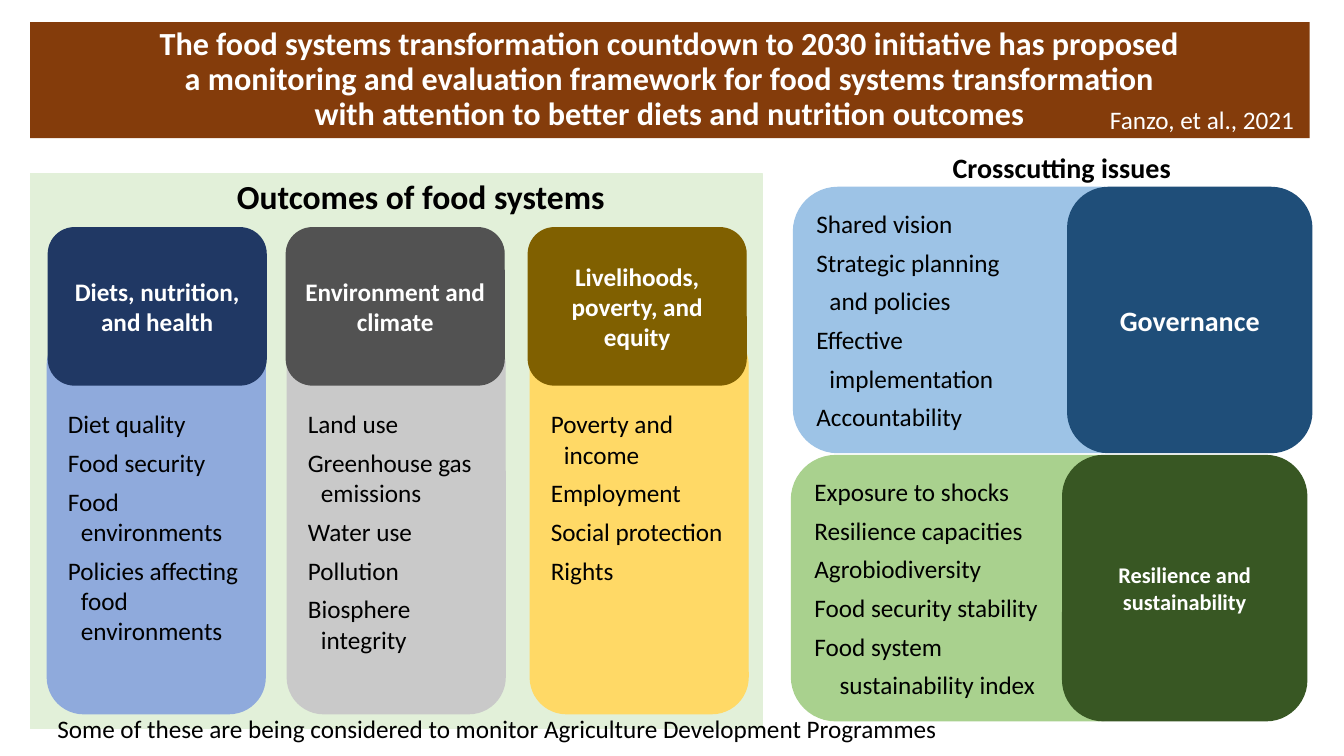
"""Build the food systems monitoring framework slide."""
from pptx import Presentation
from pptx.dml.color import RGBColor
from pptx.enum.shapes import MSO_SHAPE
from pptx.enum.text import MSO_ANCHOR, PP_ALIGN
from pptx.util import Inches, Pt

RECT, ROUNDED = MSO_SHAPE.RECTANGLE, MSO_SHAPE.ROUNDED_RECTANGLE
TOP, MIDDLE = MSO_ANCHOR.TOP, MSO_ANCHOR.MIDDLE
LEFT, CENTER = PP_ALIGN.LEFT, PP_ALIGN.CENTER

THEME = {
    "font": "Calibri", "dark": "000000", "light": "FFFFFF",
    "banner": "843C0B", "panel": "E2F0D9",
    "title": 23, "section": 24, "crosscutting": 20, "body": 18,
}
HANGING, CONTINUED, FLUSH, INSET = (0.13, -0.13), (0.13, 0), (0, 0), (0, 0.25)

TITLE = [
    "The food systems transformation countdown to 2030 initiative has proposed",
    "a monitoring and evaluation framework for food systems transformation",
    "with attention to better diets and nutrition outcomes",
]
OUTCOMES = [
    {"heading": "Diets, nutrition, and health", "head_left": 0.48, "body_left": 0.47,
     "head_color": "203864", "body_color": "8FAADC",
     "items": ["Diet quality", "Food security", "Food environments",
               "Policies affecting food environments"]},
    {"heading": "Environment and climate", "head_left": 2.84, "body_left": 2.85,
     "head_color": "525252", "body_color": "C9C9C9",
     "items": ["Land use", "Greenhouse gas emissions", "Water use", "Pollution",
               "Biosphere integrity"]},
    {"heading": "Livelihoods, poverty, and equity", "head_left": 5.24, "body_left": 5.26,
     "head_color": "806000", "body_color": "FFD966",
     "items": ["Poverty and income", "Employment", "Social protection", "Rights"]},
]
CROSSCUTTING = [
    {"heading": "Governance", "size": 20, "head_left": 10.59, "body_left": 7.87,
     "head_color": "1F4E79", "body_color": "9DC3E6",
     "items": [("Shared vision", HANGING), ("Strategic planning", HANGING),
               ("and policies", CONTINUED), ("Effective", HANGING),
               ("implementation", CONTINUED), ("Accountability", HANGING)]},
    {"heading": "Resilience and sustainability", "size": 16, "head_left": 10.54,
     "body_left": 7.85, "head_color": "385723", "body_color": "A9D18E",
     "items": [("Exposure to shocks", FLUSH), ("Resilience capacities", FLUSH),
               ("Agrobiodiversity", FLUSH), ("Food security stability", FLUSH),
               ("Food system", FLUSH), ("sustainability index", INSET)]},
]
LABELS = [
    ("Outcomes of food systems", (2.25, 1.7, 3.89, 0.5),
     {"size": THEME["section"], "bold": True}, False),
    ("Crosscutting issues", (9.35, 1.44, 2.39, 0.44),
     {"size": THEME["crosscutting"], "bold": True}, False),
    ("Some of these are being considered to monitor Agriculture Development Programmes",
     (0.47, 7.03, 9.91, 0.4), {}, True),
    ("Fanzo, et al., 2021", (10.91, 0.99, 2.05, 0.4), {"color": THEME["light"]}, False),
]


def write(frame, paragraphs, size=THEME["body"], color=THEME["dark"], bold=False,
          align=LEFT, anchor=TOP, after=0, spacing=1.0, wrap=True):
    """Fill a frame with (lines, (margin, indent)) paragraphs."""
    frame.word_wrap = wrap
    frame.vertical_anchor = anchor
    for index, (lines, (margin, indent)) in enumerate(paragraphs):
        paragraph = frame.add_paragraph() if index else frame.paragraphs[0]
        paragraph.alignment = align
        paragraph.space_after = Pt(after)
        paragraph.line_spacing = spacing
        properties = paragraph._p.get_or_add_pPr()
        properties.set("marL", str(Inches(margin)))
        properties.set("indent", str(Inches(indent)))
        for number, line in enumerate(lines):
            if number:
                paragraph.add_line_break()
            run = paragraph.add_run()
            run.text = line
            run.font.name = THEME["font"]
            run.font.size = Pt(size)
            run.font.bold = bold
            run.font.color.rgb = RGBColor.from_string(color)


def add_block(slide, kind, place, color, outlined=True):
    """Add a plain filled block and return it."""
    block = slide.shapes.add_shape(kind, *map(Inches, place))
    block.shadow.inherit = False
    block.fill.solid()
    block.fill.fore_color.rgb = RGBColor.from_string(color)
    if outlined:
        block.line.color.rgb = RGBColor.from_string(color)
        block.line.width = Pt(1)
    else:
        block.line.fill.background()
    return block


def add_heading(slide, place, group, size=THEME["body"]):
    """Add the dark rounded block that names a group."""
    heading = add_block(slide, ROUNDED, place, group["head_color"])
    write(heading.text_frame, [([group["heading"]], FLUSH)], size=size,
          color=THEME["light"], bold=True, align=CENTER, anchor=MIDDLE)


def main():
    """Build and save the slide."""
    deck = Presentation()
    deck.slide_width, deck.slide_height = Inches(13.33), Inches(7.5)
    slide = deck.slides.add_slide(deck.slide_layouts[6])

    banner = add_block(slide, RECT, (0.3, 0.22, 12.69, 1.15), THEME["banner"], outlined=False)
    write(banner.text_frame, [(TITLE, FLUSH)], size=THEME["title"], color=THEME["light"],
          bold=True, align=CENTER, anchor=MIDDLE, spacing=0.9)

    add_block(slide, RECT, (0.3, 1.72, 7.26, 5.51), THEME["panel"])
    for outcome in OUTCOMES:
        body = add_block(slide, ROUNDED, (outcome["body_left"], 3.26, 2.16, 3.82),
                         outcome["body_color"])
        body.text_frame.margin_top = Inches(0.69)
        write(body.text_frame, [([item], HANGING) for item in outcome["items"]], after=6)
        add_heading(slide, (outcome["head_left"], 2.26, 2.16, 1.56), outcome)

    for row, issue in enumerate(CROSSCUTTING):
        top = 1.86 + row * 2.66
        body = add_block(slide, ROUNDED, (issue["body_left"], top, 3.49, 2.63),
                         issue["body_color"])
        write(body.text_frame, [([item], indents) for item, indents in issue["items"]],
              anchor=MIDDLE, after=6)
        add_heading(slide, (issue["head_left"], top, 2.42, 2.63), issue, issue["size"])

    for label, place, style, wrap in LABELS:
        box = slide.shapes.add_textbox(*map(Inches, place))
        write(box.text_frame, [([label], FLUSH)], wrap=wrap, **style)

    deck.save("out.pptx")


if __name__ == "__main__":
    main()
